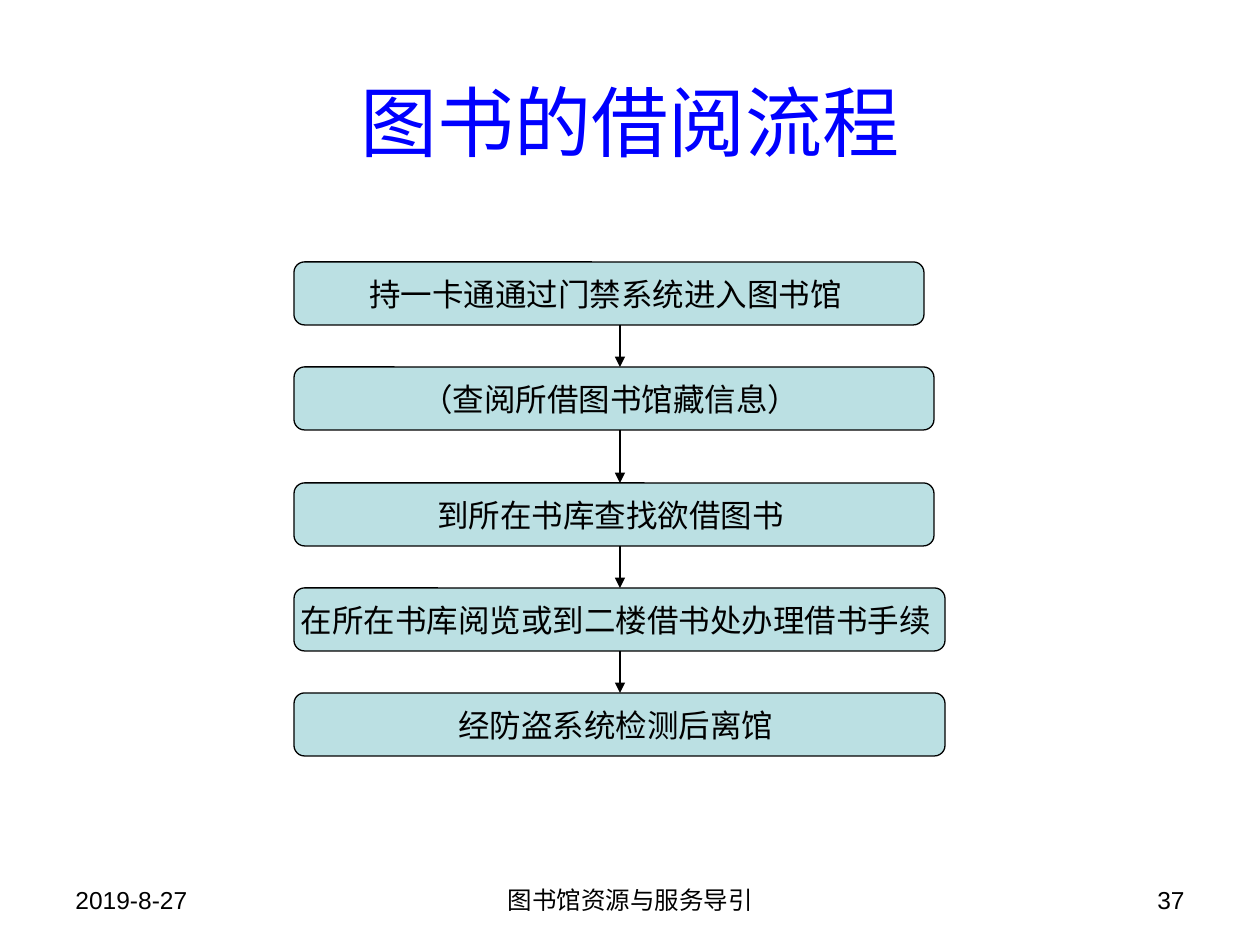
from dataclasses import dataclass

from lxml.etree import SubElement as sub
from pptx import Presentation
from pptx.dml.color import RGBColor as RGB
from pptx.enum.shapes import MSO_CONNECTOR as LINK, MSO_SHAPE as SHAPE
from pptx.enum.text import MSO_ANCHOR as ANCHOR, PP_ALIGN as ALIGN
from pptx.oxml.ns import qn
from pptx.util import Pt

# Content
TITLE = "图书的借阅流程"
# text, top, width
STEPS = [
    ("持一卡通通过门禁系统进入图书馆 ", 262, 630),
    ("（查阅所借图书馆藏信息） ", 367, 640),
    ("到所在书库查找欲借图书 ", 483, 640),
    ("在所在书库阅览或到二楼借书处办理借书手续 ", 588, 651),
    ("经防盗系统检测后离馆 ", 693, 651),
]
# text, left, width, alignment
FOOTER = [
    ("2019-8-27", 63, 294, ALIGN.LEFT),
    ("图书馆资源与服务导引", 431, 399, ALIGN.CENTER),
    ("37", 903, 294, ALIGN.RIGHT),
]


@dataclass(frozen=True)
class Theme:
    font: str = "Arial"
    ink: RGB = RGB(0, 0, 0)
    head: RGB = RGB(0, 0, 255)
    fill: RGB = RGB(0xBB, 0xE0, 0xE3)
    big: int = 44
    body: int = 18
    small: int = 14
    line: float = 0.75


T = Theme()
PX = 914400 // 126
STEP_X, STEP_H, LINK_X = 294, 63, 620
FOOT_Y, FOOT_H = 879, 66


def px(*nums):
    return [n * PX for n in nums]


def write(shape, text, size, color=T.ink, align=ALIGN.CENTER,
          anchor=ANCHOR.MIDDLE, wrap=True):
    frame = shape.text_frame
    frame.text = text
    frame.word_wrap = wrap
    frame.vertical_anchor = anchor
    para = frame.paragraphs[0]
    para.alignment = align
    font = para.runs[0].font
    font.name, font.size = T.font, Pt(size)
    font.color.rgb = color


def outline(shape):
    shape.line.color.rgb = T.ink
    shape.line.width = Pt(T.line)


def add_step(shapes, text, top, width):
    box = shapes.add_shape(SHAPE.FLOWCHART_ALTERNATE_PROCESS,
                           *px(STEP_X, top, width, STEP_H))
    box.shadow.inherit = False
    box.fill.solid()
    box.fill.fore_color.rgb = T.fill
    outline(box)
    write(box, text, T.body, wrap=False)


def add_arrow(shapes, start, end):
    arrow = shapes.add_connector(LINK.STRAIGHT,
                                 *px(LINK_X, start, LINK_X, end))
    outline(arrow)
    sub(arrow.line._get_or_add_ln(), qn("a:tailEnd"), type="triangle")
    sub(arrow._element.spPr, qn("a:effectLst"))


def main():
    prs = Presentation()
    prs.slide_width, prs.slide_height = px(1260, 945)
    shapes = prs.slides.add_slide(prs.slide_layouts[6]).shapes

    # Footer
    for text, left, width, align in FOOTER:
        box = shapes.add_textbox(*px(left, FOOT_Y, width, FOOT_H))
        write(box, text, T.small, align=align, anchor=ANCHOR.TOP)

    # Title
    write(shapes.add_textbox(*px(63, 42, 1134, 157)), TITLE, T.big, T.head)

    # Steps, each joined to the next
    for step in STEPS:
        add_step(shapes, *step)
    for (_, top, _), (_, below, _) in zip(STEPS, STEPS[1:]):
        add_arrow(shapes, top + STEP_H, below)

    prs.save("out.pptx")


if __name__ == "__main__":
    main()
